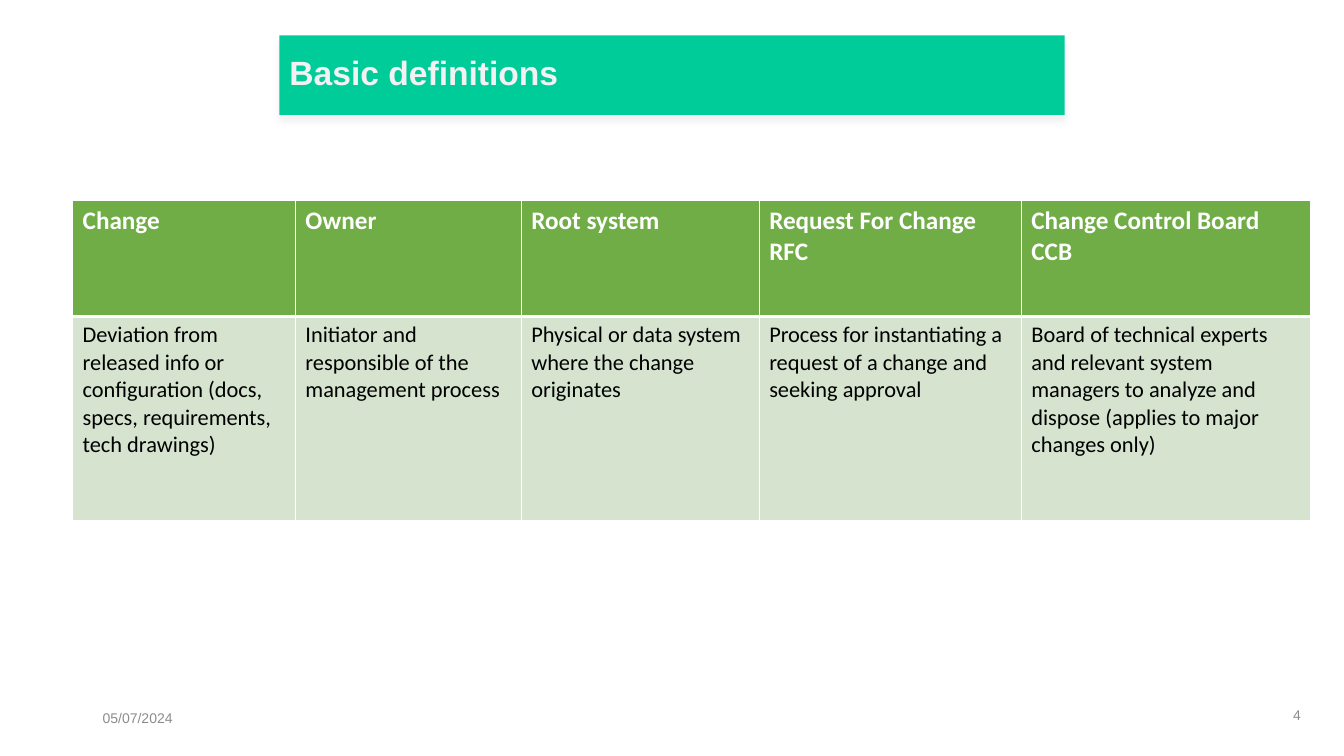
from lxml import etree
from pptx import Presentation
from pptx.dml.color import RGBColor
from pptx.enum.text import MSO_ANCHOR, MSO_AUTO_SIZE, PP_ALIGN
from pptx.oxml import parse_xml
from pptx.oxml.ns import nsdecls, qn
from pptx.util import Inches, Pt

LEFT, RIGHT = PP_ALIGN.LEFT, PP_ALIGN.RIGHT
MIDDLE = MSO_ANCHOR.MIDDLE
NO_AUTOFIT = MSO_AUTO_SIZE.NONE
WHITE, LIGHT_GRAY, GRAY = "FFFFFF", "F2F2F2", "8C8C8C"

TITLE_FORMAT = {"name": "Arial", "size": Pt(24), "bold": True, "color": LIGHT_GRAY}
FOOTER_FORMAT = {"name": "Arial", "size": Pt(10), "bold": False, "color": GRAY}
HEADER_FORMAT = {"name": "Calibri", "size": Pt(18), "bold": True, "color": WHITE}
BODY_FORMAT = {"name": "Calibri", "size": Pt(16), "bold": False, "color": "000000"}

DEFINITIONS = [
    (2.21, "Change",
     "Deviation from released info or configuration (docs, specs, requirements, tech drawings)"),
    (2.24, "Owner", "Initiator and responsible of the management process"),
    (2.36, "Root system", "Physical or data system where the change originates"),
    (2.6, "Request For Change\nRFC",
     "Process for instantiating a request of a change and seeking approval"),
    (2.87, "Change Control Board\nCCB",
     "Board of technical experts and relevant system managers to analyze and dispose "
     "(applies to major changes only)"),
]


def write_text(text_frame, text, text_format, alignment=LEFT):
    text_frame.text = text
    text_frame.word_wrap = True
    for paragraph in text_frame.paragraphs:
        paragraph.alignment = alignment
        for run in paragraph.runs:
            for attribute, value in text_format.items():
                if attribute == "color":
                    run.font.color.rgb = RGBColor.from_string(value)
                else:
                    setattr(run.font, attribute, value)


def style_cell(cell, fill, bottom_width):
    """Set white borders, 1 pt except at the bottom, and then the fill."""
    properties = cell._tc.get_or_add_tcPr()
    for side, width in (("L", 1), ("R", 1), ("T", 1), ("B", bottom_width)):
        line = etree.SubElement(properties, qn(f"a:ln{side}"), w=str(Pt(width)))
        solid_fill = etree.SubElement(line, qn("a:solidFill"))
        etree.SubElement(solid_fill, qn("a:srgbClr"), val=WHITE)
    cell.fill.solid()
    cell.fill.fore_color.rgb = RGBColor.from_string(fill)


presentation = Presentation()
presentation.slide_width = Inches(13.33)
presentation.slide_height = Inches(7.5)
slide = presentation.slides.add_slide(presentation.slide_layouts[5])

# Title banner
title = slide.shapes.title
title.left, title.top = Inches(2.77), Inches(0.35)
title.width, title.height = Inches(7.79), Inches(0.79)
title.fill.solid()
title.fill.fore_color.rgb = RGBColor.from_string("00CC99")
title._element.spPr.append(parse_xml(
    f'<a:effectLst {nsdecls("a")}>'
    f'<a:outerShdw blurRad="{Pt(4)}" dist="{Pt(4)}" dir="5400000" algn="t" rotWithShape="0">'
    f'<a:srgbClr val="{LIGHT_GRAY}"/></a:outerShdw></a:effectLst>'))
write_text(title.text_frame, "Basic definitions", TITLE_FORMAT)
title.text_frame.vertical_anchor = MIDDLE
title.text_frame.auto_size = NO_AUTOFIT
title.text_frame.paragraphs[0].line_spacing = 0.9

# Date and slide number
for left, top, width, height, text, alignment in (
    (0.92, 6.92, 1.39, 0.4, "05/07/2024", LEFT),
    (9.96, 6.9, 3.04, 0.38, "4", RIGHT),
):
    footer = slide.shapes.add_textbox(Inches(left), Inches(top), Inches(width), Inches(height))
    write_text(footer.text_frame, text, FOOTER_FORMAT, alignment)
    footer.text_frame.vertical_anchor = MIDDLE

# Definitions table
table = slide.shapes.add_table(
    2, len(DEFINITIONS), Inches(0.72), Inches(1.99), Inches(12.28), Inches(3.17)).table
table.rows[0].height = Inches(1.15)
table.rows[1].height = Inches(2.02)
for column, (width, term, meaning) in enumerate(DEFINITIONS):
    table.columns[column].width = Inches(width)
    header, body = table.cell(0, column), table.cell(1, column)
    style_cell(header, "70AD47", 3)
    style_cell(body, "D5E3CF", 1)
    # The shared edge keeps the header's thick line
    body._tc.tcPr.find(qn("a:lnT")).set("w", str(Pt(3)))
    write_text(header.text_frame, term, HEADER_FORMAT)
    write_text(body.text_frame, meaning, BODY_FORMAT)

presentation.save("out.pptx")
